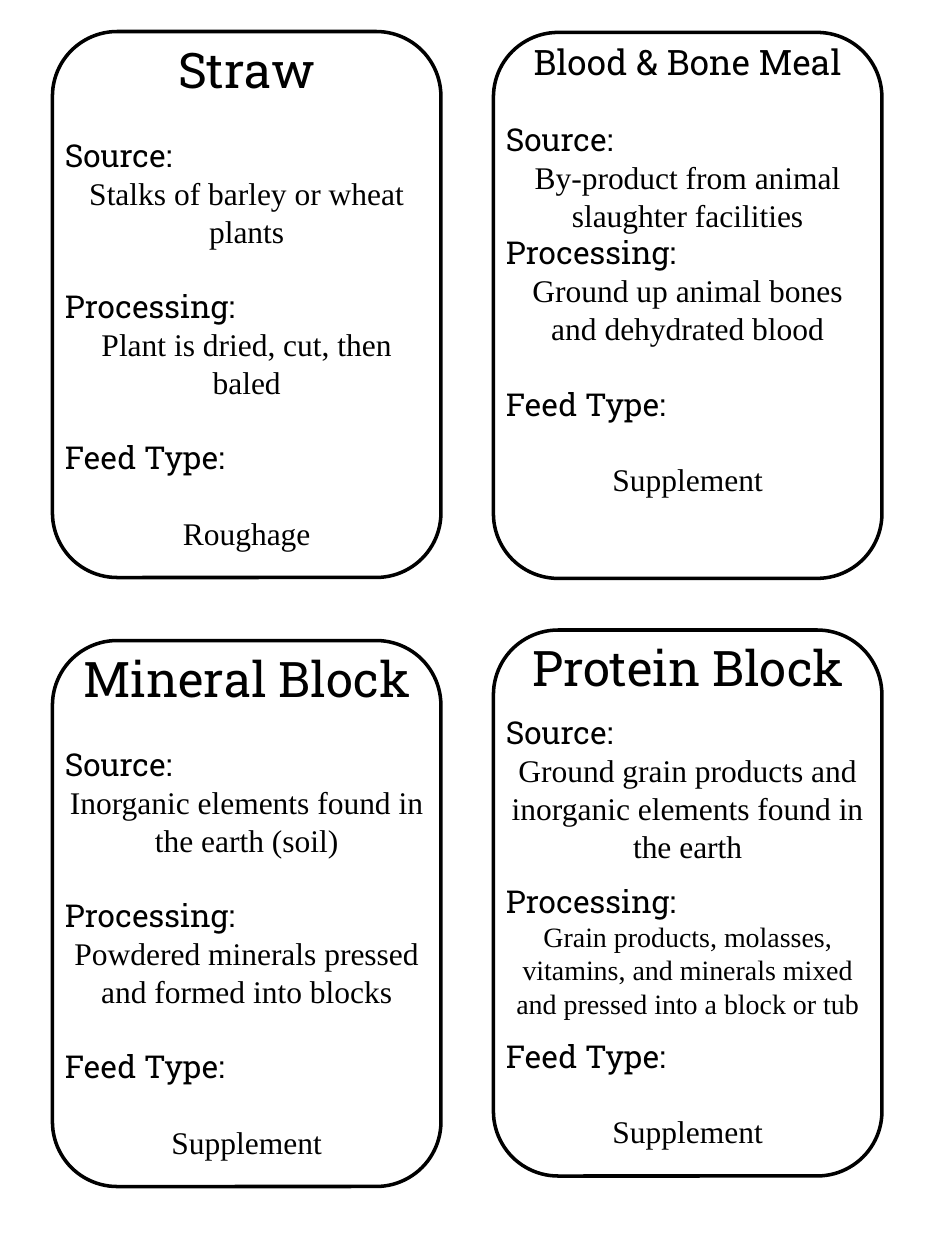
"""Build a sheet of four livestock feed cards."""
from dataclasses import dataclass

from pptx import Presentation
from pptx.dml.color import RGBColor as Rgb
from pptx.enum.shapes import MSO_SHAPE as Shape
from pptx.enum.text import MSO_AUTO_SIZE as Fit, PP_ALIGN as Align
from pptx.util import Pt


@dataclass(frozen=True)
class Theme:
    """Colours, fonts, type sizes and line settings of the cards."""
    ink: Rgb = Rgb(0, 0, 0)
    head: str = "Roboto Slab"
    body: str = "Times New Roman"
    title: int = 28
    small: int = 20
    text: int = 18
    dense: int = 16
    tight: int = 8
    line: int = 2
    lead: float = 1.2


WIDE, HIGH = 222, 312
LEFT, RIGHT = 30, 282
T = Theme()
LABELS = "Source:", "Processing:", "Feed Type:"

# Each card: left, top, text height, title, title size, gaps, facts, fact sizes
CARDS = [
    (LEFT, 18, 325, "Straw", T.title, (T.text, T.text, T.text),
     ("Stalks of barley or wheat plants", "Plant is dried, cut, then baled",
      "Roughage"), (T.text, T.text, T.text)),
    (RIGHT, 18.5, 293, "Blood & Bone Meal", T.small, (T.text, 0, T.text),
     ("By-product from animal slaughter facilities",
      "Ground up animal bones and dehydrated blood", "Supplement"),
     (T.text, T.text, T.text)),
    (LEFT, 366, 325, "Mineral Block", T.title, (T.text, T.text, T.text),
     ("Inorganic elements found in the earth (soil)",
      "Powdered minerals pressed and formed into blocks", "Supplement"),
     (T.text, T.text, T.text)),
    (RIGHT, 360, 325, "Protein Block", T.title, (T.tight, T.tight, T.tight),
     ("Ground grain products and inorganic elements found in the earth",
      "Grain products, molasses, vitamins, and minerals mixed "
      "and pressed into a block or tub", "Supplement"),
     (T.text, T.dense, T.text)),
]


class Sheet:
    """Hold the theme and the current slide, and draw on it."""

    def __init__(self, slide, theme):
        self.slide, self.theme = slide, theme

    def frame(self, left, top):
        """Draw the rounded outline of a card."""
        box = self.slide.shapes.add_shape(
            Shape.ROUNDED_RECTANGLE, Pt(left), Pt(top), Pt(WIDE), Pt(HIGH))
        box.shadow.inherit = False
        box.fill.background()
        box.line.color.rgb = self.theme.ink
        box.line.width = Pt(self.theme.line)

    def para(self, para, text, size, font, align=Align.CENTER, gap=0):
        """Fill one paragraph, with a gap of one line of the given size."""
        lead = self.theme.lead
        para.text = text
        para.alignment = align
        para.line_spacing = Pt(size * lead)
        para.space_before = Pt(gap * lead)
        for run in para.runs:
            run.font.size = Pt(size)
            run.font.name = font
            run.font.color.rgb = self.theme.ink

    def card(self, left, top, high, title, size, gaps, facts, sizes):
        """Draw a card with its title and labelled facts."""
        look = self.theme
        self.frame(left, top)
        frame = self.slide.shapes.add_textbox(
            Pt(left), Pt(top), Pt(WIDE), Pt(high)).text_frame
        frame.word_wrap = True
        frame.auto_size = Fit.SHAPE_TO_FIT_TEXT
        frame.margin_top = Pt(4.5)
        self.para(frame.paragraphs[0], title, size, look.head)
        for label, gap, fact, size in zip(LABELS, gaps, facts, sizes):
            self.para(frame.add_paragraph(), label, look.text, look.head,
                      Align.LEFT, gap)
            space = look.text if label == LABELS[-1] else 0
            self.para(frame.add_paragraph(), fact, size, look.body, gap=space)


def main():
    """Build and save the sheet."""
    deck = Presentation()
    deck.slide_width, deck.slide_height = Pt(540), Pt(720)
    sheet = Sheet(deck.slides.add_slide(deck.slide_layouts[6]), T)
    for card in CARDS:
        sheet.card(*card)
    deck.save("out.pptx")


if __name__ == "__main__":
    main()
